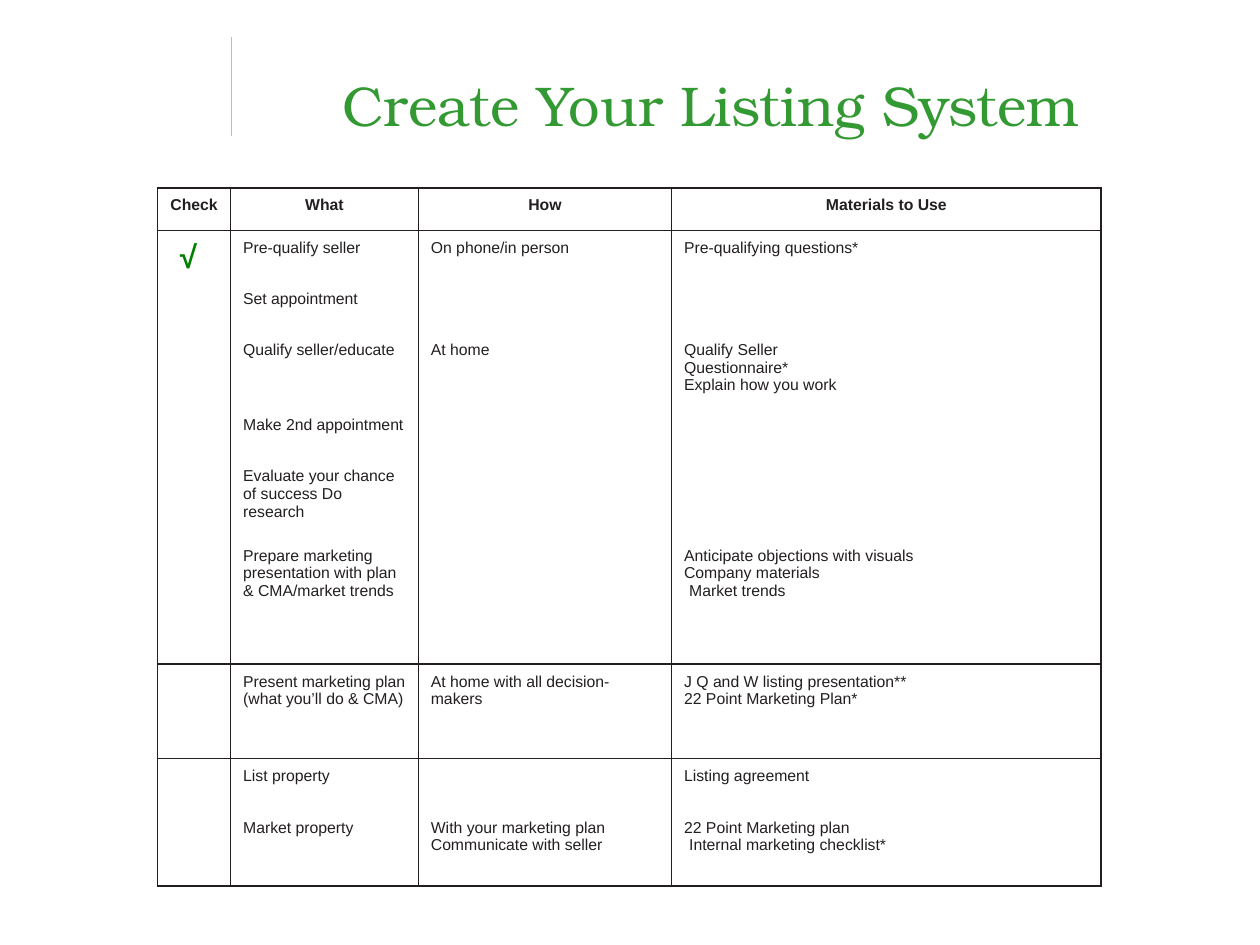
from lxml.etree import SubElement
from pptx import Presentation
from pptx.dml.color import RGBColor as RGB
from pptx.enum.shapes import MSO_CONNECTOR as CONN
from pptx.enum.text import MSO_ANCHOR as ANCHOR, PP_ALIGN as ALIGN
from pptx.oxml import parse_xml
from pptx.oxml.ns import nsdecls, qn
from pptx.util import Emu, Inches, Pt

COLORS = {"ink": "231F20", "title": "339933", "check": "008000", "rule": "C1D72D"}
BODY = {"name": "Arial", "size": Pt(9), "bold": False}
HEAD = BODY | {"bold": True}
CHECK = BODY | {"size": Pt(18), "bold": True}
TITLE = {"name": "TeX Gyre Bonum", "size": Pt(32), "bold": False}

prs = Presentation()
prs.slide_width, prs.slide_height = Inches(10), Inches(7.5)
W, H = prs.slide_width / 100, prs.slide_height / 100  # one percent of the slide
s = prs.slides.add_slide(prs.slide_layouts[6])


def style(p, text, fmt, color):
    r = p.add_run()
    r.text = text
    for name, value in fmt.items():
        setattr(r.font, name, value)
    r.font.color.rgb = RGB.from_string(COLORS[color])


def text_box(text, fmt, color, left, top, width, height, wrap):
    box = s.shapes.add_textbox(*map(Emu, map(int, (left, top, width, height))))
    tf = box.text_frame
    tf.word_wrap = wrap
    style(tf.paragraphs[0], text, fmt, color)
    return tf


# Accent rule beside the title
x = int(18.4 * W)
rule = s.shapes.add_connector(CONN.STRAIGHT, x, int(3.9 * H), x, int(14.4 * H))
rule.line.color.rgb = RGB.from_string(COLORS["rule"])
rule.line.width = Pt(0.75)
SubElement(rule._element.spPr, qn("a:effectLst"))

# Title
tf = text_box("Create Your Listing System", TITLE, "title",
              26.2 * W, 3.33 * H, 70 * W, 16.67 * H, True)
tf.vertical_anchor = ANCHOR.MIDDLE
tf.paragraphs[0].line_spacing = Pt(32)

# Table content: What, How, Materials to Use (the Check column stays empty)
rows = [
    ("What", "How", "Materials to Use"),
    ("Pre-qualify seller", "On phone/in person", "Pre-qualifying questions*"),
    ("Set appointment", "", ""),
    ("Qualify seller/educate", "At home",
     "Qualify Seller\nQuestionnaire*\nExplain how you work"),
    ("Make 2nd appointment", "", ""),
    ("Evaluate your chance of success Do research", "", ""),
    ("Prepare marketing presentation with plan\n& CMA/market trends", "",
     "Anticipate objections with visuals\nCompany materials\nMarket trends"),
    ("Present marketing plan\n(what you’ll do & CMA)",
     "At home with all decision-makers",
     "J Q and W listing presentation**\n22 Point Marketing Plan*"),
    ("List property", "", "Listing agreement"),
    ("Market property", "With your marketing plan\nCommunicate with seller",
     "22 Point Marketing plan\nInternal marketing checklist*"),
]
indented = {"Market trends", "Internal marketing checklist*"}
col_widths = [0.58, 1.49, 2.01, 3.41]
row_heights = [0.34, 0.4, 0.41, 0.55, 0.41, 0.63, 1, 0.75, 0.41, 0.6]
block_starts = {0, 1, 7, 8, len(rows)}  # rows with a line above them

table = s.shapes.add_table(len(rows), len(col_widths), Inches(1.25), Inches(1.49),
                           Inches(sum(col_widths)), Inches(sum(row_heights))).table
for col, width in zip(table.columns, col_widths):
    col.width = Inches(width)
for row, height in zip(table.rows, row_heights):
    row.height = Inches(height)

for i, texts in enumerate(rows):
    for j, text in enumerate(("" if i else "Check", *texts)):
        cell = table.cell(i, j)
        cell.fill.background()
        cell.margin_left = cell.margin_right = Inches(0.1)
        cell.margin_top = cell.margin_bottom = Inches(0.07)

        # Borders: all verticals, horizontals only around blocks
        sides = {"L": True, "R": True, "T": i in block_starts, "B": i + 1 in block_starts}
        tc_pr = cell._tc.get_or_add_tcPr()
        for k, (side, drawn) in enumerate(sides.items()):
            fill = (f'<a:solidFill><a:srgbClr val="{COLORS["ink"]}"/></a:solidFill>'
                    if drawn else "<a:noFill/>")
            tc_pr.insert(k, parse_xml(
                f'<a:ln{side} {nsdecls("a")} w="{Pt(1)}">{fill}</a:ln{side}>'))

        # Text, one paragraph a line
        tf = cell.text_frame
        for n, line in enumerate(text.split("\n")):
            p = tf.add_paragraph() if n else tf.paragraphs[0]
            p.alignment = ALIGN.LEFT if i else ALIGN.CENTER
            if line in indented:
                p._p.get_or_add_pPr().set("marL", str(Inches(0.04)))
            if line:
                style(p, line, BODY if i else HEAD, "ink")
            else:
                p.font.size = Pt(9)

# Check mark over the first column
text_box("√", CHECK, "check", 13.3 * W, 24.4 * H, 3.4 * W, 5.33 * H, False)

prs.save("out.pptx")
